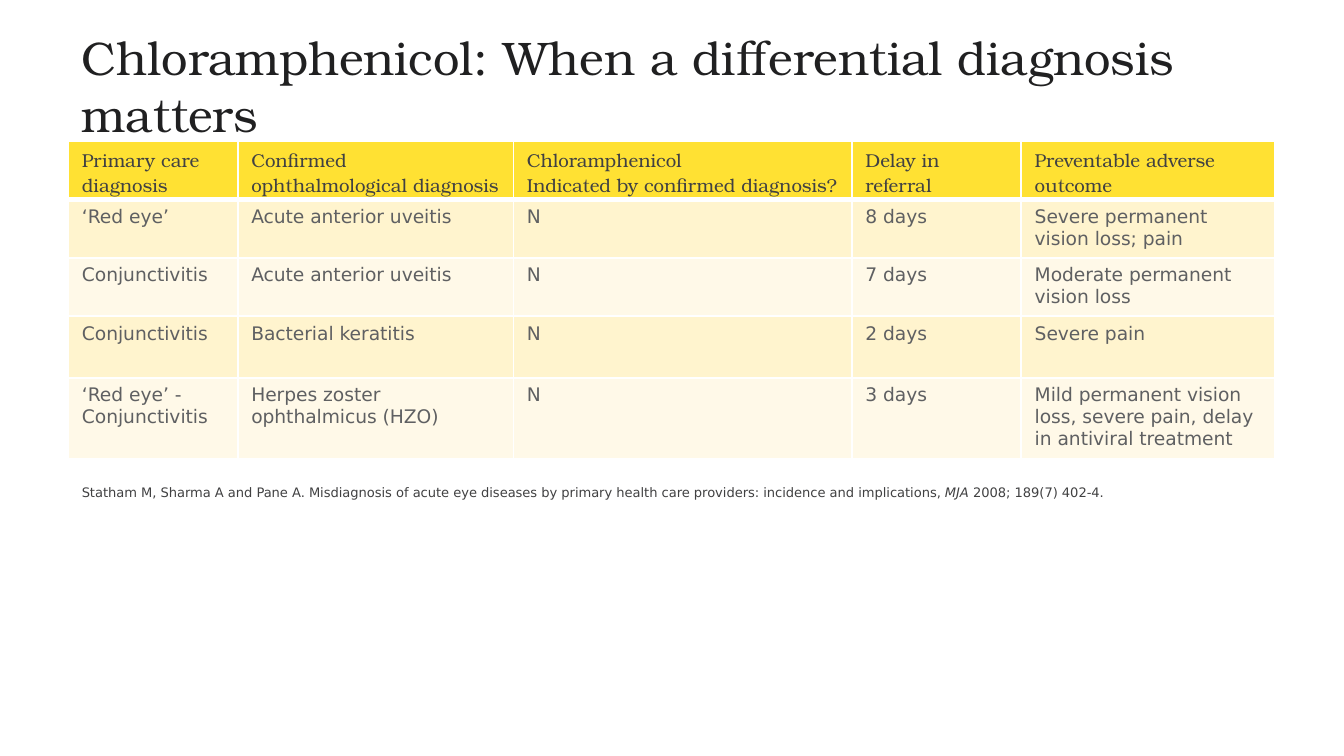
import dataclasses
import typing

import lxml.etree
import pptx
import pptx.dml.color
import pptx.enum.text
import pptx.oxml.ns
import pptx.util

Inches = pptx.util.Inches
Pt = pptx.util.Pt

COLORS = {
    "title": "202021",
    "dark": "414142",
    "body": "5F6062",
    "header": "FFE133",
    "odd": "FFF4CE",
    "even": "FFF9E8",
    "border": "FFFFFF",
}
SERIF = "TeX Gyre Bonum"
SANS = "DejaVu Sans"
LEFT = 0.51
WIDTH = 8.98
TABLE_HEIGHT = 2.36


@dataclasses.dataclass(frozen=True)
class TextStyle:
    font: str
    size: float
    color: str


@dataclasses.dataclass(frozen=True)
class Row:
    height: float
    cells: tuple[str, ...]


TITLE_STYLE = TextStyle(SERIF, 25.2, "title")
HEADER_STYLE = TextStyle(SERIF, 10, "dark")
BODY_STYLE = TextStyle(SANS, 10, "body")
CITATION_STYLE = TextStyle(SANS, 7, "dark")

COLUMN_WIDTHS = (1.26, 2.05, 2.52, 1.26, 1.89)
ROWS = (
    Row(0.29, (
        "Primary care diagnosis",
        "Confirmed ophthalmological diagnosis",
        "Chloramphenicol\nIndicated by confirmed diagnosis?",
        "Delay in referral",
        "Preventable adverse outcome",
    )),
    Row(0.31, ("‘Red eye’", "Acute anterior uveitis", "N", "8 days",
               "Severe permanent vision loss; pain")),
    Row(0.42, ("Conjunctivitis", "Acute anterior uveitis", "N", "7 days",
               "Moderate permanent vision loss")),
    Row(0.46, ("Conjunctivitis", "Bacterial keratitis", "N", "2 days", "Severe pain")),
    Row(0.55, ("‘Red eye’ - Conjunctivitis", "Herpes zoster ophthalmicus (HZO)", "N", "3 days",
               "Mild permanent vision loss, severe pain, delay in antiviral treatment")),
)
CITATION = (
    ("Statham M, Sharma A and Pane A. Misdiagnosis of acute eye diseases by primary "
     "health care providers: incidence and implications, ", False),
    ("MJA", True),
    (" 2008; 189(7) 402-4.", False),
)


def rgb(name: str) -> pptx.dml.color.RGBColor:
    return pptx.dml.color.RGBColor.from_string(COLORS[name])


def add_run(paragraph: typing.Any, text: str, style: TextStyle, italic: bool = False) -> None:
    run = paragraph.add_run()
    run.text = text
    run.font.name = style.font
    run.font.size = Pt(style.size)
    run.font.color.rgb = rgb(style.color)
    run.font.bold = False
    run.font.italic = italic


def add_text_box(slide: typing.Any, top: float, width: float, height: float) -> typing.Any:
    shape = slide.shapes.add_textbox(Inches(LEFT), Inches(top), Inches(width), Inches(height))
    shape.text_frame.word_wrap = True
    return shape.text_frame


def add_title(slide: typing.Any) -> None:
    frame = add_text_box(slide, 0.34, 9.21, 0.59)
    frame.vertical_anchor = pptx.enum.text.MSO_ANCHOR.MIDDLE
    paragraph = frame.paragraphs[0]
    add_run(paragraph, "Chloramphenicol: When a differential diagnosis matters", TITLE_STYLE)


def set_borders(cell: typing.Any, top: float, bottom: float) -> None:
    qn = pptx.oxml.ns.qn
    properties = cell._tc.get_or_add_tcPr()
    for side, width in (("L", 1), ("R", 1), ("T", top), ("B", bottom)):
        line = lxml.etree.SubElement(properties, qn(f"a:ln{side}"), w=str(Pt(width)))
        fill = lxml.etree.SubElement(line, qn("a:solidFill"))
        lxml.etree.SubElement(fill, qn("a:srgbClr"), val=COLORS["border"])


def fill_cell(cell: typing.Any, text: str, row_index: int) -> None:
    is_header = row_index == 0
    set_borders(cell, 3 if row_index == 1 else 1, 3 if is_header else 1)
    cell.fill.solid()
    cell.fill.fore_color.rgb = rgb("header" if is_header else "odd" if row_index % 2 else "even")
    frame = cell.text_frame
    for index, line in enumerate(text.split("\n")):
        paragraph = frame.add_paragraph() if index else frame.paragraphs[0]
        add_run(paragraph, line, HEADER_STYLE if is_header else BODY_STYLE)


def add_diagnosis_table(slide: typing.Any) -> None:
    shape = slide.shapes.add_table(
        len(ROWS), len(COLUMN_WIDTHS),
        Inches(LEFT), Inches(1.05), Inches(WIDTH), Inches(TABLE_HEIGHT),
    )
    table = shape.table
    for column, width in zip(table.columns, COLUMN_WIDTHS):
        column.width = Inches(width)
    for row_index, row in enumerate(ROWS):
        table.rows[row_index].height = Inches(row.height)
        for column_index, text in enumerate(row.cells):
            fill_cell(table.cell(row_index, column_index), text, row_index)
    shape.height = Inches(TABLE_HEIGHT)


def add_citation(slide: typing.Any) -> None:
    paragraph = add_text_box(slide, 3.53, WIDTH, 0.59).paragraphs[0]
    paragraph.line_spacing = 1.2
    properties = paragraph._p.get_or_add_pPr()
    properties.set("marL", str(Inches(0.29)))
    properties.set("indent", str(Inches(-0.29)))
    for text, italic in CITATION:
        add_run(paragraph, text, CITATION_STYLE, italic)


def main() -> None:
    presentation = pptx.Presentation()
    presentation.slide_width = Inches(10)
    presentation.slide_height = presentation.slide_width * 9 // 16
    slide = presentation.slides.add_slide(presentation.slide_layouts[6])
    add_title(slide)
    add_diagnosis_table(slide)
    add_citation(slide)
    presentation.save("out.pptx")


if __name__ == "__main__":
    main()
